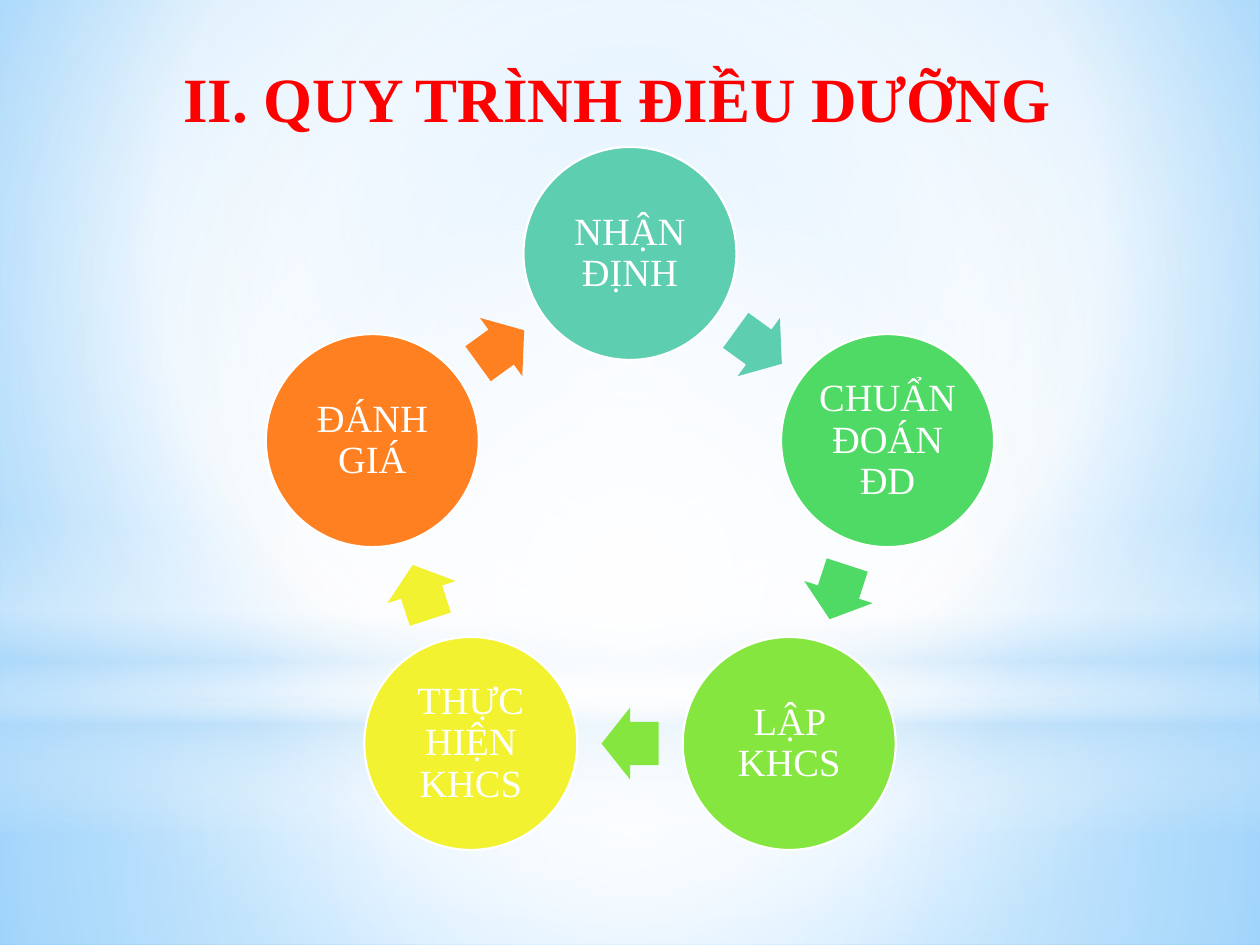
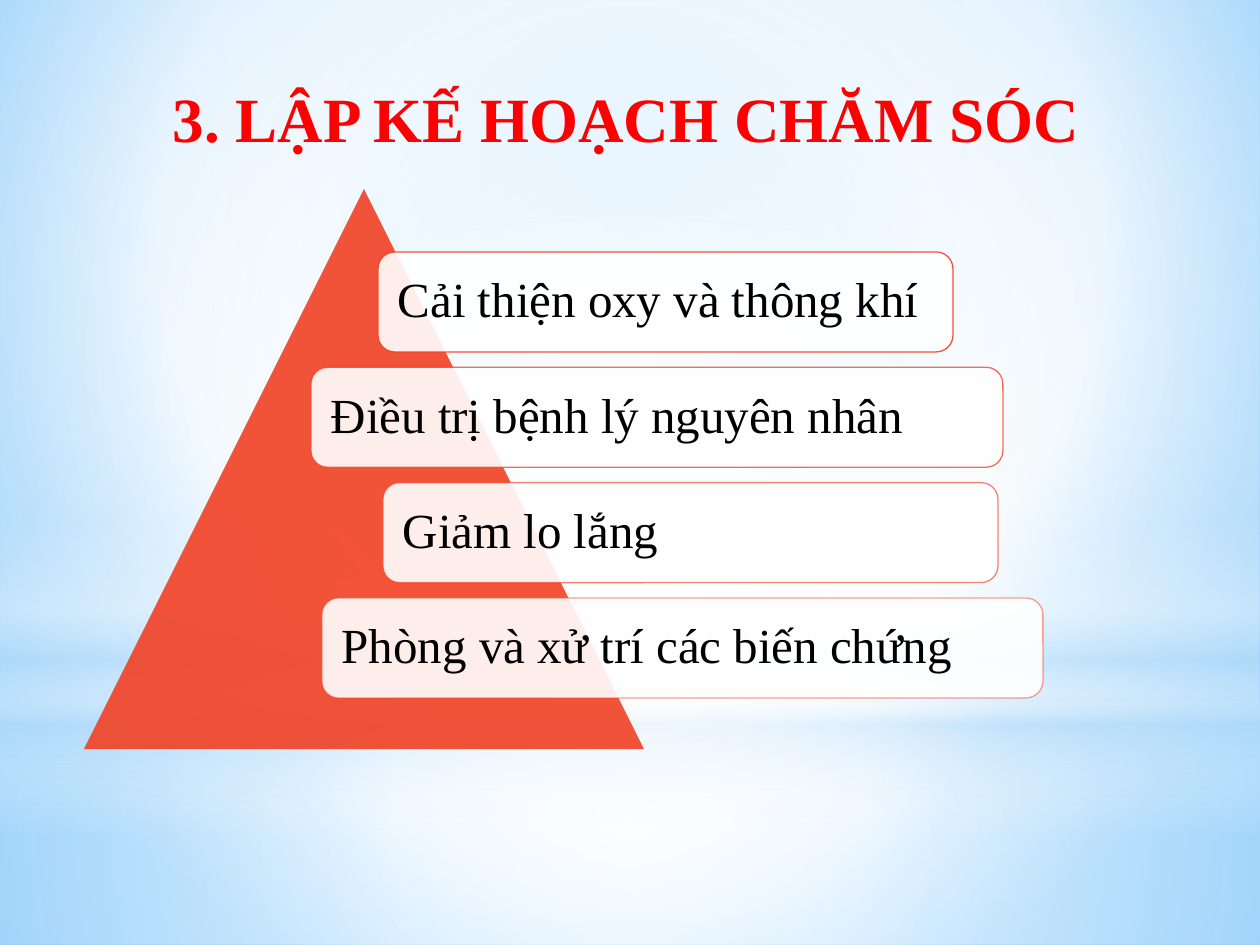
import math

import lxml.etree
import pptx
import pptx.dml.color
import pptx.enum.shapes
import pptx.enum.text
import pptx.oxml.ns
import pptx.util

SCALE = 914400 / 126
PAGE_WIDTH, PAGE_HEIGHT = 1260, 945
TITLE_ONLY = 5
KIND = pptx.enum.shapes.MSO_SHAPE
ALIGN = pptx.enum.text.PP_ALIGN
ANCHOR = pptx.enum.text.MSO_ANCHOR

COLOURS = {
    "sky": "9ED5FF", "deep sky": "5BB9FF", "mist": "B4DCFA", "white": "FFFFFF",
    "black": "000000", "title": "FF0000", "pyramid": "F14124",
    "teal": "5DCEAF", "green": "4EDA64", "lime": "86E640",
    "yellow": "F2F230", "orange": "FF8021",
}
TITLE_FONT = {"name": "Times New Roman", "size": pptx.util.Pt(36), "bold": True}
STEP_FONT = {"name": "Times New Roman", "size": pptx.util.Pt(22)}
GOAL_FONT = {"name": "Times New Roman", "size": pptx.util.Pt(28)}

CENTRE = (50, 50, 50, 50)
BACKGROUND = [(0, "sky", 100), (60, "white", 100), (100, "deep sky", 100)]
BANDS = [
    (KIND.OVAL, (0, 220, 1260, 703), [(0, "white", 100), (56, "white", 0)], CENTRE),
    (KIND.RECTANGLE, (0, 519, 1260, 315),
     [(0, "white", 0), (29, "white", 30), (45, "mist", 40), (55, "white", 26),
      (65, "mist", 60), (100, "white", 0)], None),
    (KIND.RECTANGLE, (0, 0, 1260, 703),
     [(0, "white", 89), (48, "white", 62), (100, "mist", 79)], CENTRE),
    (KIND.RECTANGLE, (0, 703, 1260, 242),
     [(0, "white", 91), (37, "white", 76), (100, "mist", 79)], CENTRE),
]
STEPS = [
    ("NHẬN ĐỊNH", "teal"), ("CHUẨN ĐOÁN ĐD", "green"), ("LẬP KHCS", "lime"),
    ("THỰC HIỆN KHCS", "yellow"), ("ĐÁNH GIÁ", "orange"),
]
GOALS = [
    ("Cải thiện oxy và thông khí", 294, 575),
    ("Điều trị bệnh lý nguyên nhân", 227, 692),
    ("Giảm lo lắng", 299, 615),
    ("Phòng và xử trí các biến chứng", 238, 721),
]


def px(length):
    """Turn a length in px into EMU."""
    return pptx.util.Emu(round(length * SCALE))


def rgb(colour):
    """Look up a named colour."""
    return pptx.dml.color.RGBColor.from_string(COLOURS[colour])


def apply(target, values):
    """Set each named attribute on the target."""
    for name, value in values.items():
        setattr(target, name, value)


def child(parent, tag, **attributes):
    """Append a DrawingML element."""
    element = lxml.etree.SubElement(parent, pptx.oxml.ns.qn(f"a:{tag}"))
    for name, value in attributes.items():
        element.set(name, str(value))
    return element


def set_alpha(shape, place, percent):
    """Make the solid colour found at a place in the shape translucent."""
    colour = shape.element.xpath(f"./p:spPr/{place}a:solidFill/a:srgbClr")[0]
    child(colour, "alpha", val=round(percent * 1000))


def paint_gradient(owner, fill, stops, focus):
    """Fill with a radial gradient around a focus, or a vertical one without it."""
    fill.gradient()
    gradient = owner.element.xpath(".//a:gradFill")[0]
    gradient.clear()
    gradient.set("rotWithShape", "1")
    stop_list = child(gradient, "gsLst")
    for position, colour, alpha in stops:
        stop = child(stop_list, "gs", pos=position * 1000)
        tint = child(stop, "srgbClr", val=COLOURS[colour])
        if alpha < 100:
            child(tint, "alpha", val=alpha * 1000)
    if focus:
        edges = {side: edge * 1000 for side, edge in zip("ltrb", focus)}
        child(child(gradient, "path", path="circle"), "fillToRect", **edges)
    else:
        child(gradient, "lin", ang=90 * 60000, scaled=0)


def add_figure(page, kind, box, colour=None, line=None, width=1):
    """Add a preset shape without shadow."""
    shape = page.shapes.add_shape(kind, *map(px, box))
    shape.shadow.inherit = False
    if colour:
        shape.fill.solid()
        shape.fill.fore_color.rgb = rgb(colour)
    if line:
        shape.line.color.rgb = rgb(line)
        shape.line.width = pptx.util.Pt(width)
    else:
        shape.line.fill.background()
    return shape


def write(shape, text, font, colour, align, anchor, inset=None, spacing=None):
    """Put one formatted paragraph into a shape."""
    frame = shape.text_frame
    apply(frame, {"word_wrap": True, "vertical_anchor": anchor,
                  "auto_size": pptx.enum.text.MSO_AUTO_SIZE.NONE})
    if inset is not None:
        sides = ("left", "top", "right", "bottom")
        apply(frame, {f"margin_{side}": px(inset) for side in sides})
    para = frame.paragraphs[0]
    apply(para, {"alignment": align, "line_spacing": spacing})
    span = para.add_run()
    span.text = text
    apply(span.font, font)
    span.font.color.rgb = rgb(colour)


def add_backdrop(deck, page):
    """Give the slide master its background and translucent bands."""
    master = deck.slide_master
    paint_gradient(master, master.background.fill, BACKGROUND, (20, 10, 20, 60))
    for number, (kind, box, stops, focus) in enumerate(BANDS):
        band = add_figure(page, kind, box)
        paint_gradient(band, band.fill, stops, focus)
        band.element.nvSpPr.cNvPr.set("id", str(100 + number))
        master.shapes.element.insert(2, band.element)


def add_title(page, box, text):
    """Move, fill and format the title placeholder."""
    title = page.shapes.title
    apply(title, dict(zip(("left", "top", "width", "height"), map(px, box))))
    write(title, text, TITLE_FONT, "title", ALIGN.CENTER, ANCHOR.TOP)


def add_cycle(page, box):
    """Set the steps on a ring, with an arrow halfway to each next step."""
    left, top, width, height = box
    size, arrow_width, arrow_height = 213, 57, 72
    turn = 360 / len(STEPS)
    radius = (height - size) / (1 + math.cos(math.radians(turn / 2)))
    middle_x, middle_y = left + width / 2, top + size / 2 + radius

    def around(angle, distance, wide, high):
        """Return a box centred at an angle clockwise from the top."""
        x = middle_x + distance * math.sin(math.radians(angle))
        y = middle_y - distance * math.cos(math.radians(angle))
        return x - wide / 2, y - high / 2, wide, high

    for number, (text, colour) in enumerate(STEPS):
        angle = number * turn
        circle = add_figure(page, KIND.OVAL, around(angle, radius, size, size),
                            colour, "white", 1.25)
        write(circle, text, STEP_FONT, "white", ALIGN.CENTER, ANCHOR.MIDDLE, 4, 0.9)
        halfway = angle + turn / 2
        reach = radius * math.cos(math.radians(turn / 2))
        arrow = add_figure(page, KIND.RIGHT_ARROW,
                           around(halfway, reach, arrow_width, arrow_height), colour)
        arrow.rotation = halfway
        arrow.adjustments[0], arrow.adjustments[1] = 0.6, 0.5


def add_pyramid(page, box):
    """Lay evenly spaced goal bars over a triangle."""
    left, top, width, height = box
    triangle = add_figure(page, KIND.ISOSCELES_TRIANGLE, (left, top, height, height), "pyramid")
    set_alpha(triangle, "", 90)
    first, last, bar_height = 63, 409, 100
    for number, (text, offset, bar_width) in enumerate(GOALS):
        share = number / (len(GOALS) - 1)
        bar_top = top + first + (last - first) * share
        bar = add_figure(page, KIND.ROUNDED_RECTANGLE,
                         (left + offset, bar_top, bar_width, bar_height),
                         "white", "pyramid", 0.75)
        set_alpha(bar, "", 90)
        set_alpha(bar, "a:ln/", 90 - 40 * share)
        write(bar, text, GOAL_FONT, "black", ALIGN.LEFT, ANCHOR.MIDDLE, 15, 0.9)


def main():
    """Build both slides and save the deck."""
    deck = pptx.Presentation()
    deck.slide_width, deck.slide_height = px(PAGE_WIDTH), px(PAGE_HEIGHT)
    layout = deck.slide_layouts[TITLE_ONLY]

    process = deck.slides.add_slide(layout)
    add_backdrop(deck, process)
    add_title(process, (97, 53, 1040, 90), "II. QUY TRÌNH ĐIỀU DƯỠNG")
    add_cycle(process, (266, 147, 728, 703))

    plan = deck.slides.add_slide(layout)
    add_title(plan, (54, 73, 1144, 90), "3. LẬP KẾ HOẠCH CHĂM SÓC")
    add_pyramid(plan, (84, 189, 959, 560))

    deck.save("out.pptx")


if __name__ == "__main__":
    main()
